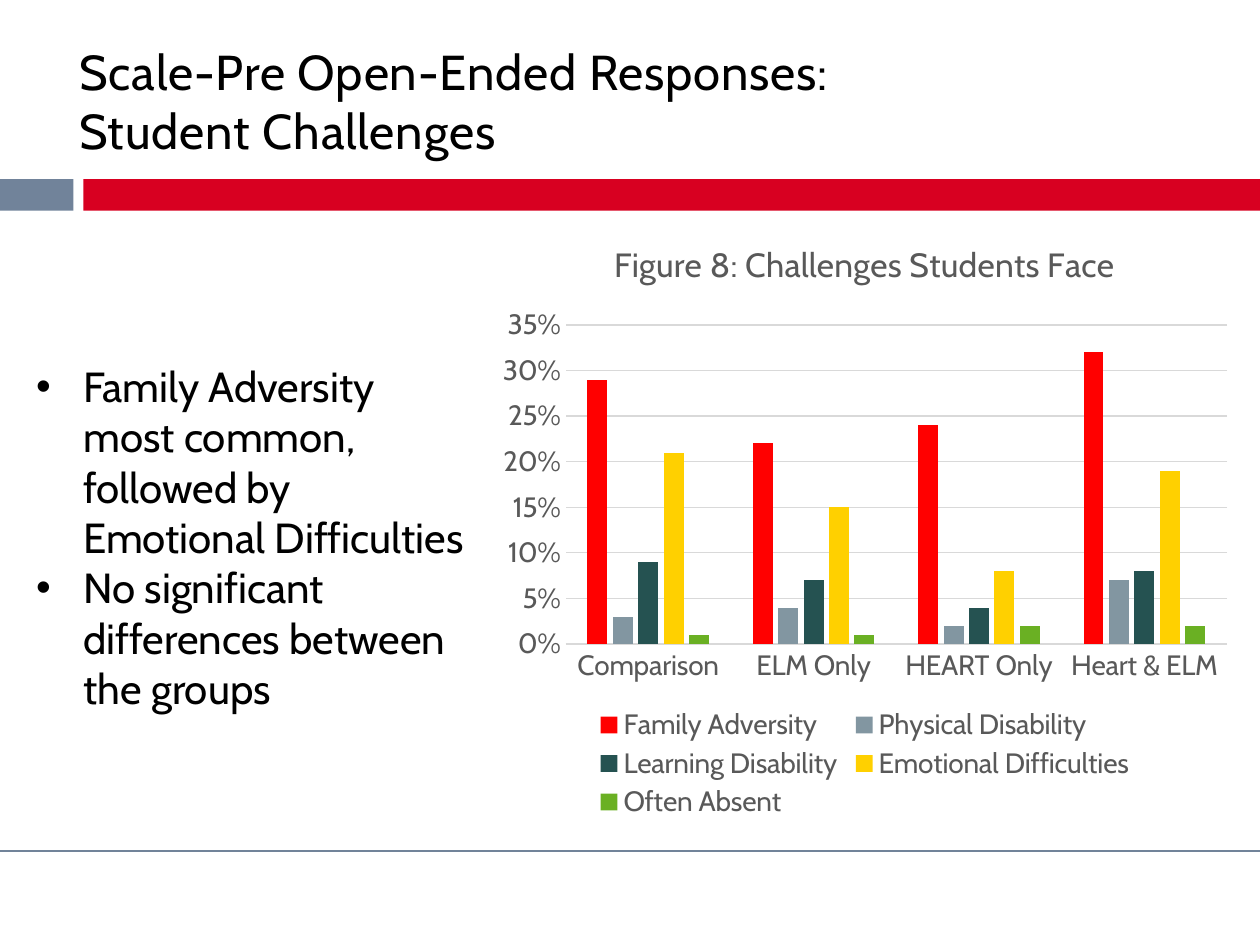
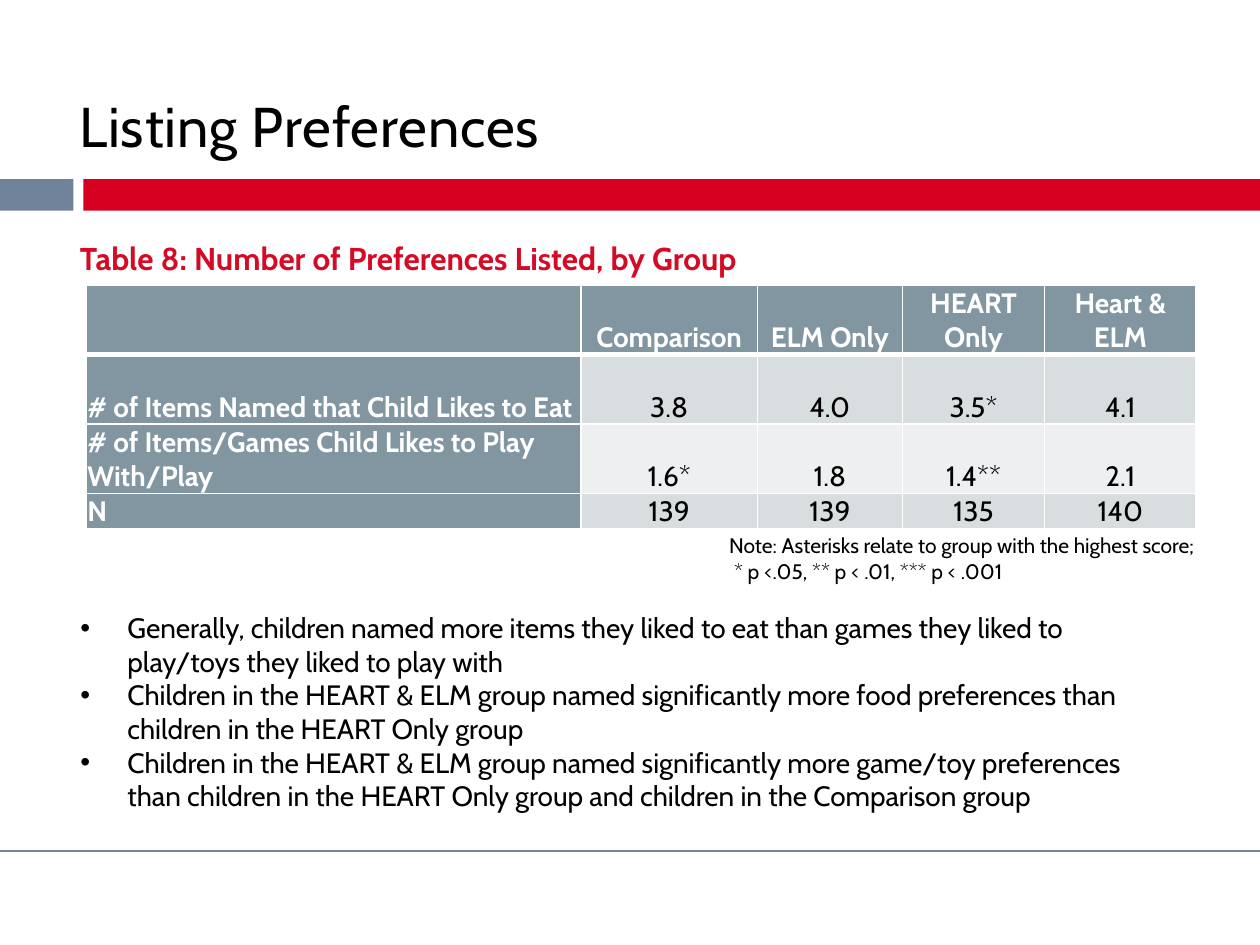
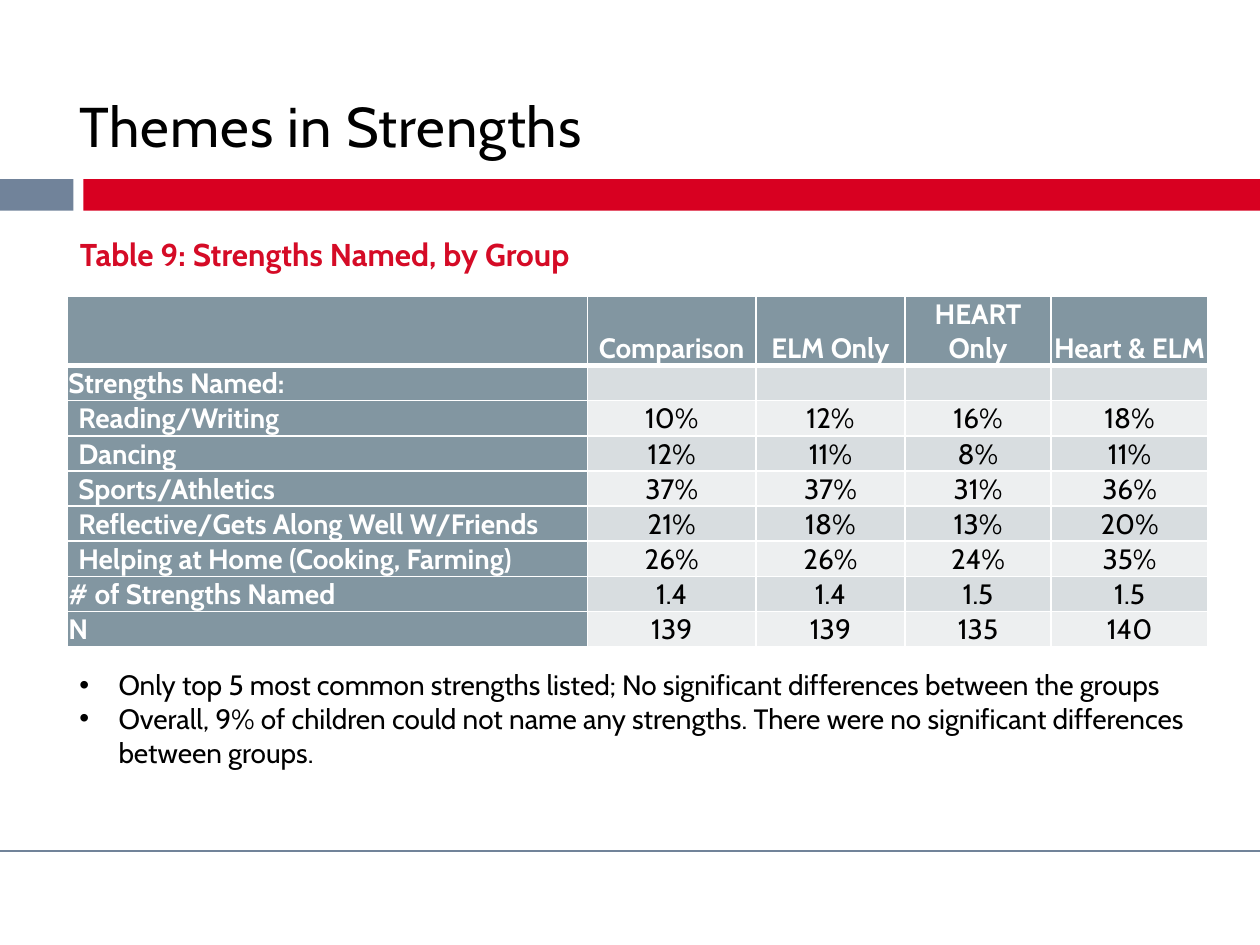
from dataclasses import dataclass

from lxml import etree
from pptx import Presentation
from pptx import util as u
from pptx.chart.data import CategoryChartData
from pptx.dml.color import RGBColor
from pptx.enum import chart as charts, shapes, text
from pptx.oxml import ns


@dataclass(frozen=True)
class Theme:
    font: str = "Cabin"
    ink: str = "000000"
    paper: str = "FFFFFF"
    red: str = "D80021"
    caption_red: str = "D50B26"
    slate: str = "71839A"
    rule: str = "718399"
    header: str = "8296A1"
    stripes: tuple = ("D8DDE0", "EDEFF0")
    chart_text: str = "595959"
    grid: str = "D9D9D9"
    series: tuple = ("FF0000", "8296A1", "255251", "FFD000", "6AB023")
    title_size: float = 32
    long_title_size: float = 28
    lead_size: float = 24
    chart_title_size: float = 19.2
    caption_size: float = 18
    body_size: float = 16
    note_size: float = 12


GROUPS = ("Comparison", "ELM Only", "HEART Only", "Heart & ELM")


class Builder:
    def __init__(self, deck, theme):
        self.deck = deck
        self.theme = theme
        self.slide = None

    def style(self, font, size, color=None, bold=False):
        font.name = self.theme.font
        font.size = u.Pt(size)
        font.bold = bold
        font.color.rgb = RGBColor.from_string(color or self.theme.ink)

    def open_slide(self, title, size=None):
        theme = self.theme
        self.slide = self.deck.slides.add_slide(self.deck.slide_layouts[6])
        self.band(0, 1.48, theme.slate)
        self.band(1.68, 23.72, theme.red)
        self.footer_rule()
        frame = self.text_box(1.35, 1.04, 22.43, 2.29, [title], size or theme.title_size)
        frame.vertical_anchor = text.MSO_ANCHOR.BOTTOM
        spacing = frame.paragraphs[0]._p.pPr.find(ns.qn("a:defRPr"))
        spacing.set("spc", "50")

    def band(self, left, width, color):
        band = self.slide.shapes.add_shape(
            shapes.MSO_SHAPE.RECTANGLE, u.Cm(left), u.Cm(3.61), u.Cm(width), u.Cm(0.64))
        band.shadow.inherit = False
        band.fill.solid()
        band.fill.fore_color.rgb = RGBColor.from_string(color)
        band.line.fill.background()

    def footer_rule(self):
        height = u.Cm(17.15)
        rule = self.slide.shapes.add_connector(
            shapes.MSO_CONNECTOR.STRAIGHT, 0, height, self.deck.slide_width, height)
        rule.line.color.rgb = RGBColor.from_string(self.theme.rule)
        rule.line.width = u.Pt(1)
        etree.SubElement(rule._element.spPr, ns.qn("a:effectLst"))

    def text_box(self, left, top, width, height, lines, size,
                 color=None, bold=False, bullet_indent=None):
        box = self.slide.shapes.add_textbox(u.Cm(left), u.Cm(top), u.Cm(width), u.Cm(height))
        frame = box.text_frame
        frame.word_wrap = True
        for index, line in enumerate(lines):
            para = frame.paragraphs[0] if index == 0 else frame.add_paragraph()
            para.text = line
            if bullet_indent:
                self.bullet(para, bullet_indent)
            self.style(para.font, size, color, bold)
        return frame

    def bullet(self, para, indent):
        properties = para._p.get_or_add_pPr()
        properties.set("marL", str(u.Cm(indent)))
        properties.set("indent", str(-u.Cm(indent)))
        etree.SubElement(properties, ns.qn("a:buFont"), typeface="Arial")
        etree.SubElement(properties, ns.qn("a:buChar"), char="•")

    def caption(self, top, line):
        self.text_box(1.36, top, 22.4, 1.35, [line], self.theme.caption_size,
                      self.theme.caption_red, bold=True)

    def borders(self, cell, top, bottom):
        properties = cell._tc.get_or_add_tcPr()
        for side, width in (("lnL", 1), ("lnR", 1), ("lnT", top), ("lnB", bottom)):
            line = etree.SubElement(properties, ns.qn(f"a:{side}"), w=str(u.Pt(width)))
            fill = etree.SubElement(line, ns.qn("a:solidFill"))
            etree.SubElement(fill, ns.qn("a:srgbClr"), val=self.theme.paper)

    def table(self, left, top, widths, heights, rows, indented=()):
        theme = self.theme
        rows = [("", *GROUPS), *rows]
        table = self.slide.shapes.add_table(
            len(rows), len(widths), u.Cm(left), u.Cm(top),
            u.Cm(sum(widths)), u.Cm(sum(heights))).table
        table.first_row = table.horz_banding = False
        for column, width in zip(table.columns, widths):
            column.width = u.Cm(width)
        for row_index, (row, height, values) in enumerate(zip(table.rows, heights, rows)):
            row.height = u.Cm(height)
            for column_index, (cell, value) in enumerate(zip(row.cells, values)):
                heading = row_index == 0 or column_index == 0
                self.borders(cell, 3 if row_index == 1 else 1, 3 if row_index == 0 else 1)
                cell.fill.solid()
                cell.fill.fore_color.rgb = RGBColor.from_string(
                    theme.header if heading else theme.stripes[(row_index - 1) % 2])
                cell.vertical_anchor = text.MSO_ANCHOR.BOTTOM
                inset = column_index == 0 and value in indented
                cell.margin_left = u.Cm(0.23 if inset else 0.03)
                cell.margin_right = cell.margin_top = u.Cm(0.03)
                cell.margin_bottom = 0
                para = cell.text_frame.paragraphs[0]
                para.text = value
                if column_index:
                    para.alignment = text.PP_ALIGN.CENTER
                self.style(para.font, theme.body_size,
                           theme.paper if heading else theme.ink, heading)

    def column_chart(self, left, top, width, height, title, series):
        theme = self.theme
        data = CategoryChartData(number_format="0%")
        data.categories = GROUPS
        for name, values in series.items():
            data.add_series(name, values)
        chart = self.slide.shapes.add_chart(
            charts.XL_CHART_TYPE.COLUMN_CLUSTERED, u.Cm(left), u.Cm(top),
            u.Cm(width), u.Cm(height), data).chart
        self.style(chart.font, theme.body_size, theme.chart_text)
        chart.has_title = True
        heading = chart.chart_title.text_frame.paragraphs[0]
        heading.text = title
        self.style(heading.font, theme.chart_title_size, theme.chart_text)
        chart.chart_title.include_in_layout = False
        chart.has_legend = True
        chart.legend.position = charts.XL_LEGEND_POSITION.BOTTOM
        chart.legend.include_in_layout = False
        for axis in (chart.category_axis, chart.value_axis):
            axis.major_tick_mark = axis.minor_tick_mark = charts.XL_TICK_MARK.NONE
            self.style(axis.tick_labels.font, theme.body_size, theme.chart_text)
        values_axis = chart.value_axis
        values_axis.minimum_scale, values_axis.maximum_scale = 0, 0.35
        values_axis.major_unit = 0.05
        values_axis.tick_labels.number_format = "0%"
        values_axis.tick_labels.number_format_is_linked = False
        for line in (chart.category_axis.format.line, values_axis.major_gridlines.format.line):
            line.color.rgb = RGBColor.from_string(theme.grid)
            line.width = u.Pt(0.75)
        values_axis.format.line.fill.background()
        plot = chart.plots[0]
        plot.vary_by_categories = False
        plot.gap_width, plot.overlap = 219, -27
        for bars, color in zip(plot.series, theme.series):
            bars.format.fill.solid()
            bars.format.fill.fore_color.rgb = RGBColor.from_string(color)


def challenges(builder):
    theme = builder.theme
    builder.open_slide("Scale-Pre Open-Ended Responses:\vStudent Challenges",
                       theme.long_title_size)
    builder.text_box(0.48, 7.14, 9.35, 6.4, [
        "Family Adversity most common, followed by Emotional Difficulties",
        "No significant differences between the groups",
    ], theme.lead_size, bullet_indent=0.95)
    builder.column_chart(9.83, 4.34, 15.21, 12.27, "Figure 8: Challenges Students Face", {
        "Family Adversity": (0.29, 0.22, 0.24, 0.32),
        "Physical Disability": (0.03, 0.04, 0.02, 0.07),
        "Learning Disability": (0.09, 0.07, 0.04, 0.08),
        "Emotional Difficulties": (0.21, 0.15, 0.08, 0.19),
        "Often Absent": (0.01, 0.01, 0.02, 0.02),
    })


def preferences(builder):
    theme = builder.theme
    builder.open_slide("Listing Preferences")
    builder.caption(4.7, "Table 8: Number of Preferences Listed, by Group")
    builder.table(1.73, 5.75, (9.98, 3.56, 2.92, 2.87, 3.05), (1.4, 1.4, 1.4, 0.7), [
        ("# of Items Named that Child Likes to Eat", "3.8", "4.0", "3.5*", "4.1"),
        ("# of Items/Games Child Likes to Play With/Play", "1.6*", "1.8", "1.4**", "2.1"),
        ("N", "139", "139", "135", "140"),
    ])
    builder.text_box(1.37, 12.19, 22.4, 4.37, [
        "Generally, children named more items they liked to eat than games they liked to "
        "play/toys they liked to play with",
        "Children in the HEART & ELM group named significantly more food preferences than "
        "children in the HEART Only group",
        "Children in the HEART & ELM group named significantly more game/toy preferences "
        "than children in the HEART Only group and children in the Comparison group",
    ], theme.body_size, bullet_indent=0.95)
    note = builder.text_box(14.45, 10.62, 10.34, 1.27, [
        "Note: Asterisks relate to group with the highest score;",
        "* p <.05, ** p < .01, *** p < .001",
    ], theme.note_size)
    note.paragraphs[1]._p.get_or_add_pPr().set("marL", str(u.Cm(0.1)))


def strengths(builder):
    builder.open_slide("Themes in Strengths")
    builder.caption(4.62, "Table 9: Strengths Named, by Group")
    named = [
        ("Reading/Writing", "10%", "12%", "16%", "18%"),
        ("Dancing", "12%", "11%", "8%", "11%"),
        ("Sports/Athletics", "37%", "37%", "31%", "36%"),
        ("Reflective/Gets Along Well W/Friends", "21%", "18%", "13%", "20%"),
        ("Helping at Home (Cooking, Farming)", "26%", "26%", "24%", "35%"),
    ]
    builder.table(1.35, 5.97, (10.49, 3.4, 3, 2.95, 3.16), (1.4, *[0.7] * 8), [
        ("Strengths Named:", "", "", "", ""),
        *named,
        ("# of Strengths Named", "1.4", "1.4", "1.5", "1.5"),
        ("N", "139", "139", "135", "140"),
    ], indented=[row[0] for row in named])
    builder.text_box(1.35, 13.34, 23.32, 2.31, [
        "Only top 5 most common strengths listed; No significant differences between the groups",
        "Overall, 9% of children could not name any strengths. There were no significant "
        "differences between groups.",
    ], builder.theme.body_size, bullet_indent=0.79)


def main():
    deck = Presentation()
    deck.slide_width, deck.slide_height = u.Cm(25.4), u.Cm(19.05)
    builder = Builder(deck, Theme())
    for build_slide in (challenges, preferences, strengths):
        build_slide(builder)
    deck.save("out.pptx")


if __name__ == "__main__":
    main()
